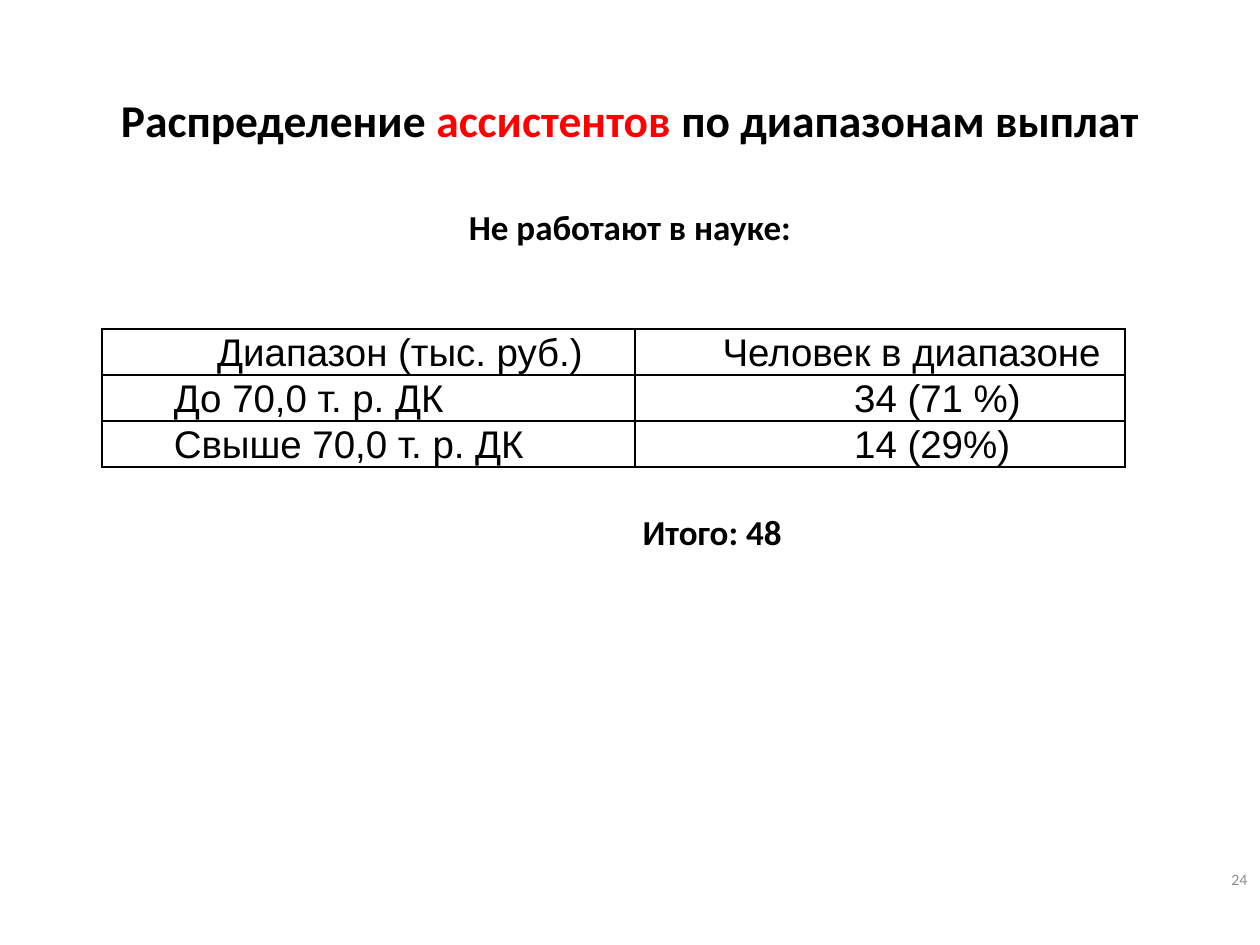
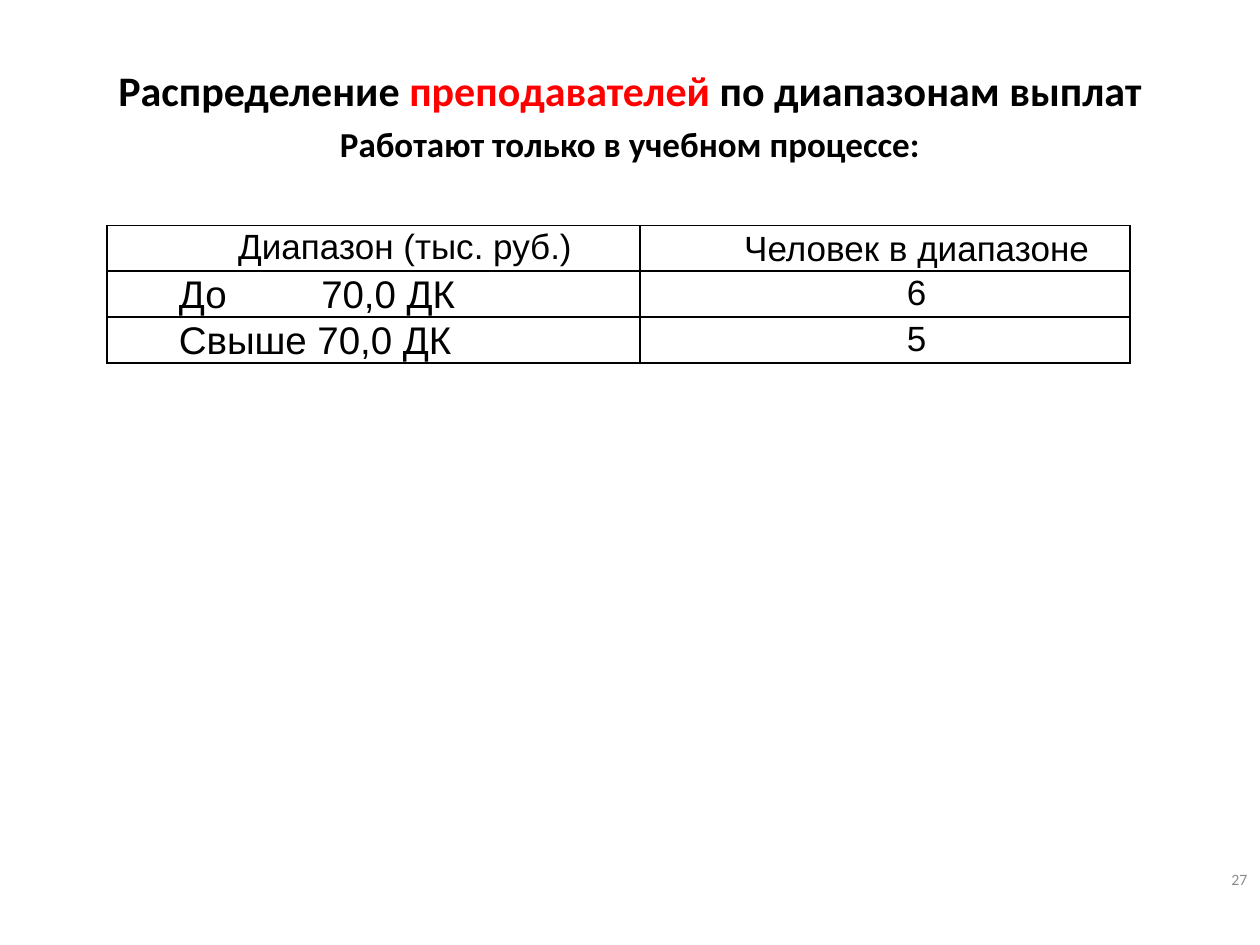
from dataclasses import dataclass

import pptx
import pptx.dml.color
import pptx.enum.text
import pptx.oxml
import pptx.oxml.ns
import pptx.util

Inches = pptx.util.Inches
Align = pptx.enum.text.PP_ALIGN
Anchor = pptx.enum.text.MSO_ANCHOR


@dataclass(frozen=True)
class Theme:
    text: str = "000000"
    accent: str = "FF0000"
    muted: str = "8C8C8C"
    heading_font: str = "Calibri"
    table_font: str = "Arial"
    subtitle_size: int = 20
    number_size: int = 9


THEME = Theme()
LEFT, WIDTH, LINE_HEIGHT = 0.5, 9.0, 0.5
COLUMN_WIDTHS = (4.23, 3.89)
ROW_HEIGHT = 0.36
CELL_MARGIN, CELL_INDENT = 0.07, 0.5
HEADER = ("Диапазон (тыс. руб.)", "Человек в диапазоне")

# Middles are the heights of the centre of a text line, in inches.
# "label_hang" is where the text after a tab in the first column starts.
SLIDES = [
    {
        "group": "ассистентов", "title_size": 26, "title_middle": 0.95,
        "subtitle": "Не работают в науке:", "subtitle_middle": 1.8,
        "table_at": (0.81, 2.61),
        "rows": [("До 70,0 т. р. ДК", "34 (71 %)"),
                 ("Свыше 70,0 т. р. ДК", "14 (29%)")],
        "header_size": 22, "label_size": 22, "value_size": 22,
        "header_anchors": (Anchor.MIDDLE, Anchor.MIDDLE),
        "value_align": Align.LEFT, "value_indent": 1.67,
        "total": "Итого: 48", "total_at": (5.1, 4.22), "number": "24",
    },
    {
        "group": "преподавателей", "title_size": 24, "title_middle": 0.71,
        "subtitle": "Работают только в учебном процессе:", "subtitle_middle": 1.14,
        "table_at": (0.85, 1.79),
        "rows": [("До\t70,0 ДК", "6"), ("Свыше 70,0 ДК", "5")],
        "header_size": 20, "label_size": 22, "value_size": 20,
        "header_anchors": (Anchor.TOP, Anchor.MIDDLE),
        "value_align": Align.CENTER, "value_indent": CELL_INDENT,
        "label_hang": 1.63, "number": "27",
    },
]


def style_span(span, size, color=THEME.text, font=THEME.heading_font, bold=True):
    span.font.size = pptx.util.Pt(size)
    span.font.name = font
    span.font.bold = bold
    span.font.color.rgb = pptx.dml.color.RGBColor.from_string(color)


def set_frame(box, margin=0):
    frame = box.text_frame
    frame.word_wrap = True
    frame.auto_size = pptx.enum.text.MSO_AUTO_SIZE.NONE
    frame.vertical_anchor = Anchor.MIDDLE
    frame.margin_left = frame.margin_right = Inches(margin)
    frame.margin_top = frame.margin_bottom = 0
    return frame


def add_line(page, text, left, middle, width, align, size, **style):
    """Add one line of text centred on the height given by middle."""
    box = page.shapes.add_textbox(Inches(left), Inches(middle - LINE_HEIGHT / 2),
                                  Inches(width), Inches(LINE_HEIGHT))
    para = set_frame(box).paragraphs[0]
    para.text = text
    para.alignment = align
    style_span(para.runs[0], size, **style)


def fill_title(page, content):
    title = page.shapes.title
    title.left, title.width = Inches(LEFT), Inches(WIDTH)
    title.top = Inches(content["title_middle"] - LINE_HEIGHT / 2)
    title.height = Inches(LINE_HEIGHT)
    para = set_frame(title).paragraphs[0]
    para.alignment = Align.CENTER
    for text, color in (("Распределение ", THEME.text),
                        (content["group"], THEME.accent),
                        (" по диапазонам выплат", THEME.text)):
        span = para.add_run()
        span.text = text
        style_span(span, content["title_size"], color)


def add_borders(cell):
    properties = cell._tc.get_or_add_tcPr()
    for side in ("lnL", "lnR", "lnT", "lnB"):
        properties.append(pptx.oxml.parse_xml(
            f'<a:{side} {pptx.oxml.ns.nsdecls("a")} w="12700"><a:solidFill>'
            f'<a:srgbClr val="{THEME.text}"/></a:solidFill></a:{side}>'))


def fill_cell(cell, text, size, align, indent=CELL_INDENT, hang=None, anchor=Anchor.TOP):
    add_borders(cell)
    cell.fill.background()
    cell.margin_left = cell.margin_right = Inches(CELL_MARGIN)
    cell.margin_top = cell.margin_bottom = 0
    cell.vertical_anchor = anchor
    para = cell.text_frame.paragraphs[0]
    para.text = text
    para.alignment = align
    para.line_spacing = 1.07
    properties = para._p.get_or_add_pPr()
    body_indent = hang or indent
    properties.set("marL", str(Inches(body_indent)))
    properties.set("indent", str(Inches(indent - body_indent)))
    style_span(para.runs[0], size, font=THEME.table_font, bold=False)


def add_range_table(page, content):
    left, top = content["table_at"]
    row_count = len(content["rows"]) + 1
    table = page.shapes.add_table(
        row_count, len(COLUMN_WIDTHS), Inches(left), Inches(top),
        Inches(sum(COLUMN_WIDTHS)), Inches(ROW_HEIGHT * row_count)).table
    table.first_row = table.horz_banding = False
    for column, width in zip(table.columns, COLUMN_WIDTHS):
        column.width = Inches(width)
    for index, (text, anchor) in enumerate(zip(HEADER, content["header_anchors"])):
        fill_cell(table.cell(0, index), text, content["header_size"],
                  Align.CENTER, anchor=anchor)
    for index, (label, value) in enumerate(content["rows"], start=1):
        hang = content.get("label_hang") if "\t" in label else None
        fill_cell(table.cell(index, 0), label, content["label_size"], Align.LEFT, hang=hang)
        fill_cell(table.cell(index, 1), value, content["value_size"],
                  content["value_align"], content["value_indent"])


def build_page(deck, content):
    page = deck.slides.add_slide(deck.slide_layouts[5])
    fill_title(page, content)
    add_line(page, content["subtitle"], LEFT, content["subtitle_middle"], WIDTH,
             Align.CENTER, THEME.subtitle_size)
    add_range_table(page, content)
    if "total" in content:
        left, middle = content["total_at"]
        add_line(page, content["total"], left, middle, 2, Align.LEFT, THEME.subtitle_size)
    add_line(page, content["number"], 9.4, 6.98, 0.5, Align.RIGHT, THEME.number_size,
             color=THEME.muted, bold=False)


def main():
    deck = pptx.Presentation()
    deck.slide_width, deck.slide_height = Inches(10), Inches(7.5)
    for content in SLIDES:
        build_page(deck, content)
    deck.save("out.pptx")


if __name__ == "__main__":
    main()
